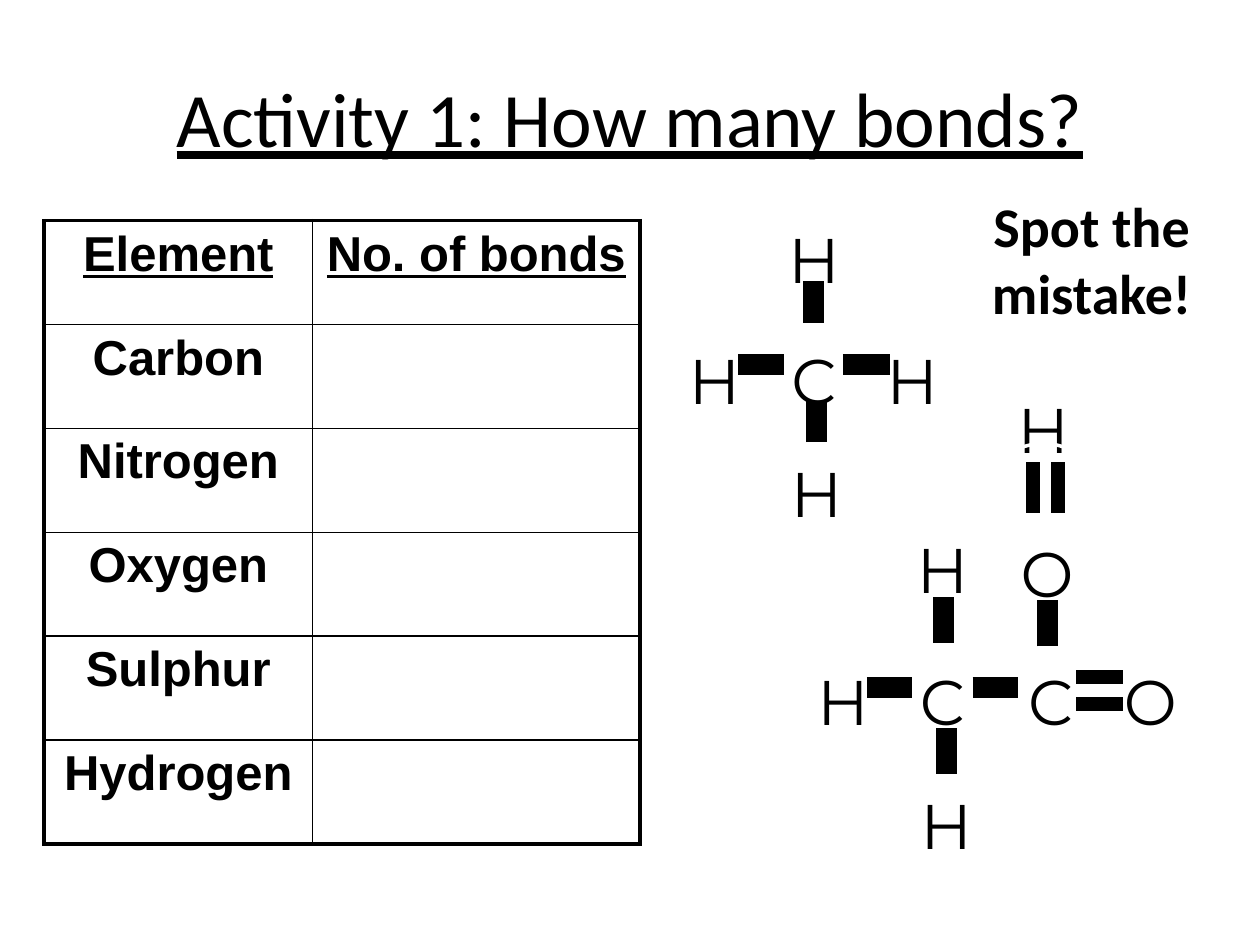
"""Build the chemical bonds activity slide."""
from dataclasses import dataclass

from lxml.etree import SubElement
from pptx import Presentation
from pptx.dml.color import RGBColor
from pptx.enum.shapes import MSO_CONNECTOR, MSO_SHAPE
from pptx.enum.text import MSO_ANCHOR, PP_ALIGN
from pptx.oxml.ns import qn
from pptx.util import Inches, Pt


@dataclass(frozen=True)
class Theme:
    black: str = "000000"
    white: str = "FFFFFF"
    body_font: str = "Calibri"
    table_font: str = "Arial"
    atom_font: str = "Montserrat"
    title_size: int = 44
    callout_size: int = 32
    table_size: int = 28
    atom_size: int = 36
    atom_outline: float = 0.75
    outer_border: float = 2.25
    inner_border: float = 1
    single_bond: int = 12
    double_bond: int = 8
    ring: int = 2


THEME = Theme()

TITLE = ("Activity 1: How many bonds?", (0.5, 0.3, 9, 1.25))
CALLOUT = ("Spot the mistake!", (7.6, 1.47, 2.13, 1.17))
HEADERS = ["Element", "No. of bonds"]
ELEMENTS = ["Carbon", "Nitrogen", "Oxygen", "Sulphur", "Hydrogen"]
TABLE_BOX = (0.35, 1.75, 4.73, 4.95)
COLUMN_WIDTHS = (2.13, 2.6)
ATOM_WIDTH, ATOM_HEIGHT = 0.7, 0.47
RING_BOX = (7.88, 3.52, 0.8, 0.65)

METHANE_ATOMS = [
    ("C", 6.46, 2.66), ("H", 7.24, 2.66), ("H", 6.48, 3.56),
    ("H", 6.46, 1.7), ("H", 5.67, 2.66),
]
ACID_ATOMS = [
    ("C", 7.48, 5.21), ("H", 7.51, 6.19), ("H", 7.48, 4.16),
    ("H", 6.69, 5.21), ("C", 8.34, 5.21), ("O", 9.13, 5.21),
    ("O", 8.31, 4.19), ("H", 8.28, 3.05),
]
SINGLE_BONDS = [
    (6.69, 2.89, 7.06, 2.89), (5.86, 2.89, 6.22, 2.89),
    (6.46, 2.56, 6.46, 2.23), (6.48, 3.51, 6.48, 3.18),
    (7.72, 5.46, 8.08, 5.46), (6.88, 5.46, 7.24, 5.46),
    (7.49, 5.1, 7.49, 4.74), (7.51, 6.14, 7.51, 5.78),
    (8.31, 5.13, 8.31, 4.76),
]
DOUBLE_BONDS = [
    (8.54, 5.37, 8.91, 5.37), (8.54, 5.59, 8.91, 5.59),
    (8.2, 4.07, 8.2, 3.67), (8.4, 4.07, 8.4, 3.67),
]


def inches(values):
    return [Inches(value) for value in values]


def style_paragraph(paragraph, font, size, bold=False, underline=False):
    paragraph.alignment = PP_ALIGN.CENTER
    paragraph.font.name = font
    paragraph.font.size = Pt(size)
    paragraph.font.bold = bold
    paragraph.font.underline = underline
    paragraph.font.color.rgb = RGBColor.from_string(THEME.black)


def add_text(slide, text, box, font, size, anchor=MSO_ANCHOR.TOP, **style):
    frame = slide.shapes.add_textbox(*inches(box)).text_frame
    frame.word_wrap = True
    frame.vertical_anchor = anchor
    paragraph = frame.paragraphs[0]
    paragraph.text = text
    style_paragraph(paragraph, font, size, **style)
    return paragraph


def add_solid_line(parent, tag, points):
    line = SubElement(parent, qn(tag), w=str(Pt(points)))
    fill = SubElement(line, qn("a:solidFill"))
    SubElement(fill, qn("a:srgbClr"), val=THEME.black)


def add_atom(slide, symbol, center, top):
    box = (center - ATOM_WIDTH / 2, top, ATOM_WIDTH, ATOM_HEIGHT)
    paragraph = add_text(slide, symbol, box, THEME.atom_font, THEME.atom_size)
    properties = paragraph.runs[0]._r.get_or_add_rPr()
    add_solid_line(properties, "a:ln", THEME.atom_outline)


def add_bond(slide, ends, width):
    bond = slide.shapes.add_connector(MSO_CONNECTOR.STRAIGHT, *inches(ends))
    bond.line.color.rgb = RGBColor.from_string(THEME.black)
    bond.line.width = Pt(width)
    SubElement(bond._element.spPr, qn("a:effectLst"))


def add_bond_table(slide):
    rows = [HEADERS] + [[element, ""] for element in ELEMENTS]
    table = slide.shapes.add_table(len(rows), len(HEADERS), *inches(TABLE_BOX)).table
    table.first_row = table.horz_banding = False
    for column, width in zip(table.columns, COLUMN_WIDTHS):
        column.width = Inches(width)
    last_row, last_column = len(rows) - 1, len(HEADERS) - 1
    for row_index, row in enumerate(rows):
        for column_index, text in enumerate(row):
            cell = table.cell(row_index, column_index)
            cell.text = text
            style_paragraph(cell.text_frame.paragraphs[0], THEME.table_font,
                            THEME.table_size, bold=True, underline=row_index == 0)
            outer_sides = {
                "a:lnL": column_index == 0, "a:lnR": column_index == last_column,
                "a:lnT": row_index == 0, "a:lnB": row_index == last_row,
            }
            for tag, outer in outer_sides.items():
                add_solid_line(cell._tc.get_or_add_tcPr(), tag,
                               THEME.outer_border if outer else THEME.inner_border)
            cell.fill.background()


def add_ring(slide):
    ring = slide.shapes.add_shape(MSO_SHAPE.OVAL, *inches(RING_BOX))
    ring.shadow.inherit = False
    ring.fill.background()
    ring.line.color.rgb = RGBColor.from_string(THEME.white)
    ring.line.width = Pt(THEME.ring)


def main():
    presentation = Presentation()
    presentation.slide_width, presentation.slide_height = inches((10, 7.5))
    slide = presentation.slides.add_slide(presentation.slide_layouts[6])
    add_text(slide, *TITLE, THEME.body_font, THEME.title_size,
             anchor=MSO_ANCHOR.MIDDLE, underline=True)
    add_bond_table(slide)
    for atom in METHANE_ATOMS + ACID_ATOMS:
        add_atom(slide, *atom)
    for bonds, width in ((SINGLE_BONDS, THEME.single_bond),
                         (DOUBLE_BONDS, THEME.double_bond)):
        for ends in bonds:
            add_bond(slide, ends, width)
    add_text(slide, *CALLOUT, THEME.body_font, THEME.callout_size, bold=True)
    add_ring(slide)
    presentation.save("out.pptx")


if __name__ == "__main__":
    main()
